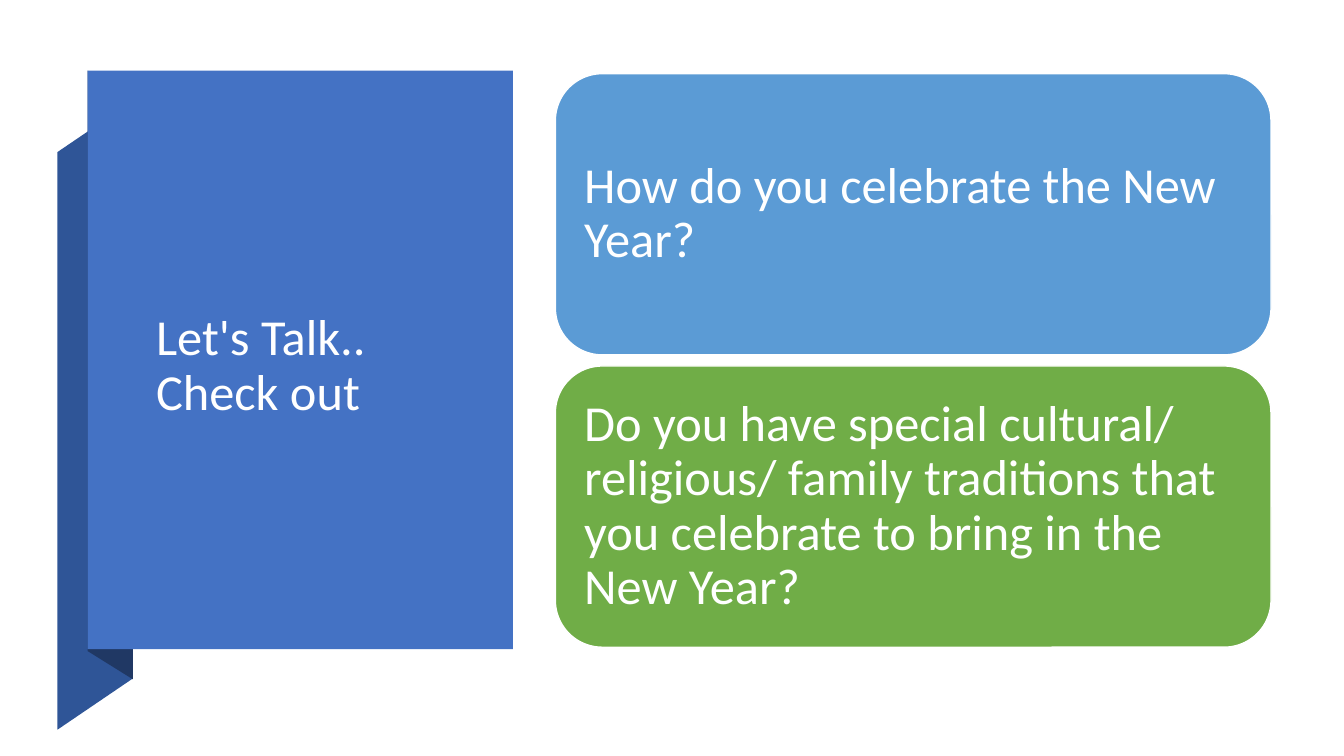
from pptx import Presentation
from pptx.dml.color import RGBColor
from pptx.enum.shapes import MSO_SHAPE
from pptx.enum.text import MSO_ANCHOR, PP_ALIGN
from pptx.util import Pt

RECTANGLE = MSO_SHAPE.RECTANGLE
ROUNDED = MSO_SHAPE.ROUNDED_RECTANGLE
MIDDLE = MSO_ANCHOR.MIDDLE
LEFT = PP_ALIGN.LEFT

WHITE = RGBColor(0xFF, 0xFF, 0xFF)
PANEL_BLUE = RGBColor(0x44, 0x72, 0xC4)
RIBBON_BLUE = RGBColor(0x2F, 0x55, 0x97)
FOLD_NAVY = RGBColor(0x20, 0x38, 0x64)
CARD_BLUE = RGBColor(0x5B, 0x9B, 0xD5)
CARD_GREEN = RGBColor(0x70, 0xAD, 0x47)

QUESTIONS = [
    ("How do you celebrate the New Year?", CARD_BLUE),
    ("Do you have special cultural/ religious/ family traditions that "
     "you celebrate to bring in the New Year?", CARD_GREEN),
]


def paint(shape, color):
    shape.shadow.inherit = False
    shape.fill.solid()
    shape.fill.fore_color.rgb = color
    shape.line.fill.background()


def write(shape, text, side_margin, edge_margin):
    frame = shape.text_frame
    frame.word_wrap = True
    frame.vertical_anchor = MIDDLE
    frame.margin_left = frame.margin_right = Pt(side_margin)
    frame.margin_top = frame.margin_bottom = Pt(edge_margin)
    para = frame.paragraphs[0]
    para.text = text
    para.alignment = LEFT
    para.line_spacing = 0.9
    para.font.name = "Calibri"
    para.font.size = Pt(36)
    para.font.color.rgb = WHITE


def add_outline(page, points, color):
    corners = [(Pt(x), Pt(y)) for x, y in points]
    builder = page.shapes.build_freeform(*corners[0])
    builder.add_line_segments(corners[1:], close=True)
    paint(builder.convert_to_shape(), color)


def add_title_panel(page, left, top, width, height):
    bottom = top + height
    outer, inner = left - 21.6, left + 32.4
    add_outline(page, [(outer, bottom + 57.6), (inner, bottom + 20.9),
                       (inner, top + 21.6), (outer, top + 58.3)], RIBBON_BLUE)
    add_outline(page, [(left, bottom + 1.4), (inner, bottom + 21.6),
                       (inner, top + 20.9), (left, top)], FOLD_NAVY)
    panel = page.shapes.add_shape(
        RECTANGLE, Pt(left), Pt(top), Pt(width), Pt(height))
    paint(panel, PANEL_BLUE)
    title = page.shapes.add_textbox(
        Pt(left + 41.8), Pt(top + 69.8), Pt(width - 87.1), Pt(height - 129.6))
    write(title, "Let's Talk.. Check out", 7.2, 3.6)


def add_question_cards(page, left, top, width, height, gap):
    card_height = (height - gap * (len(QUESTIONS) - 1)) / len(QUESTIONS)
    for index, (question, color) in enumerate(QUESTIONS):
        card_top = top + index * (card_height + gap)
        card = page.shapes.add_shape(
            ROUNDED, Pt(left), Pt(card_top), Pt(width), Pt(card_height))
        paint(card, color)
        card.line.color.rgb = WHITE
        card.line.width = Pt(1)
        write(card, question, 10.8, 10.8)


def main():
    deck = Presentation()
    deck.slide_width, deck.slide_height = Pt(960), Pt(540)
    page = deck.slides.add_slide(deck.slide_layouts[6])
    add_title_panel(page, 62.6, 50.4, 303.8, 413.3)
    add_question_cards(page, 396.7, 52.6, 511.2, 409.7, 7.9)
    deck.save("out.pptx")


if __name__ == "__main__":
    main()
